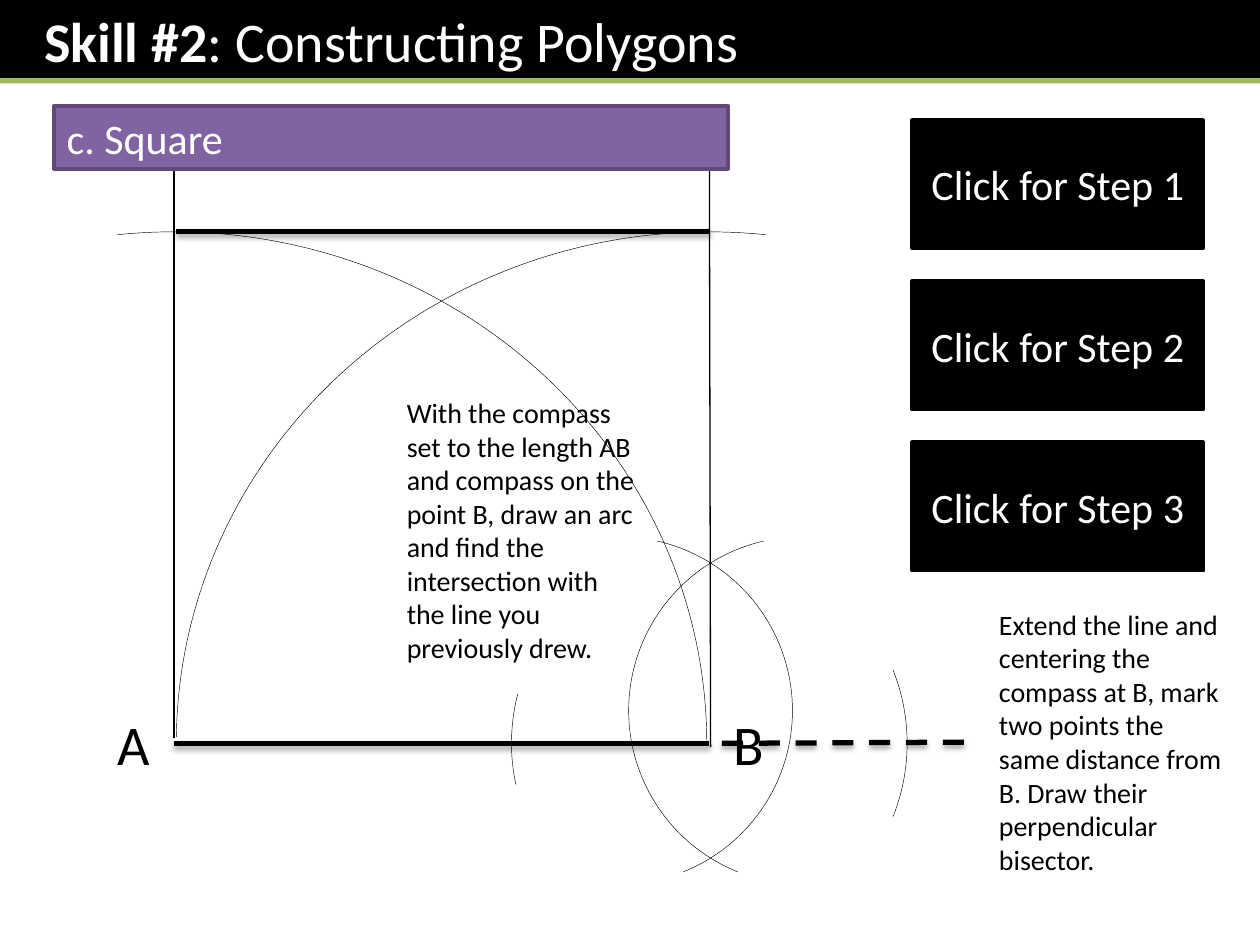
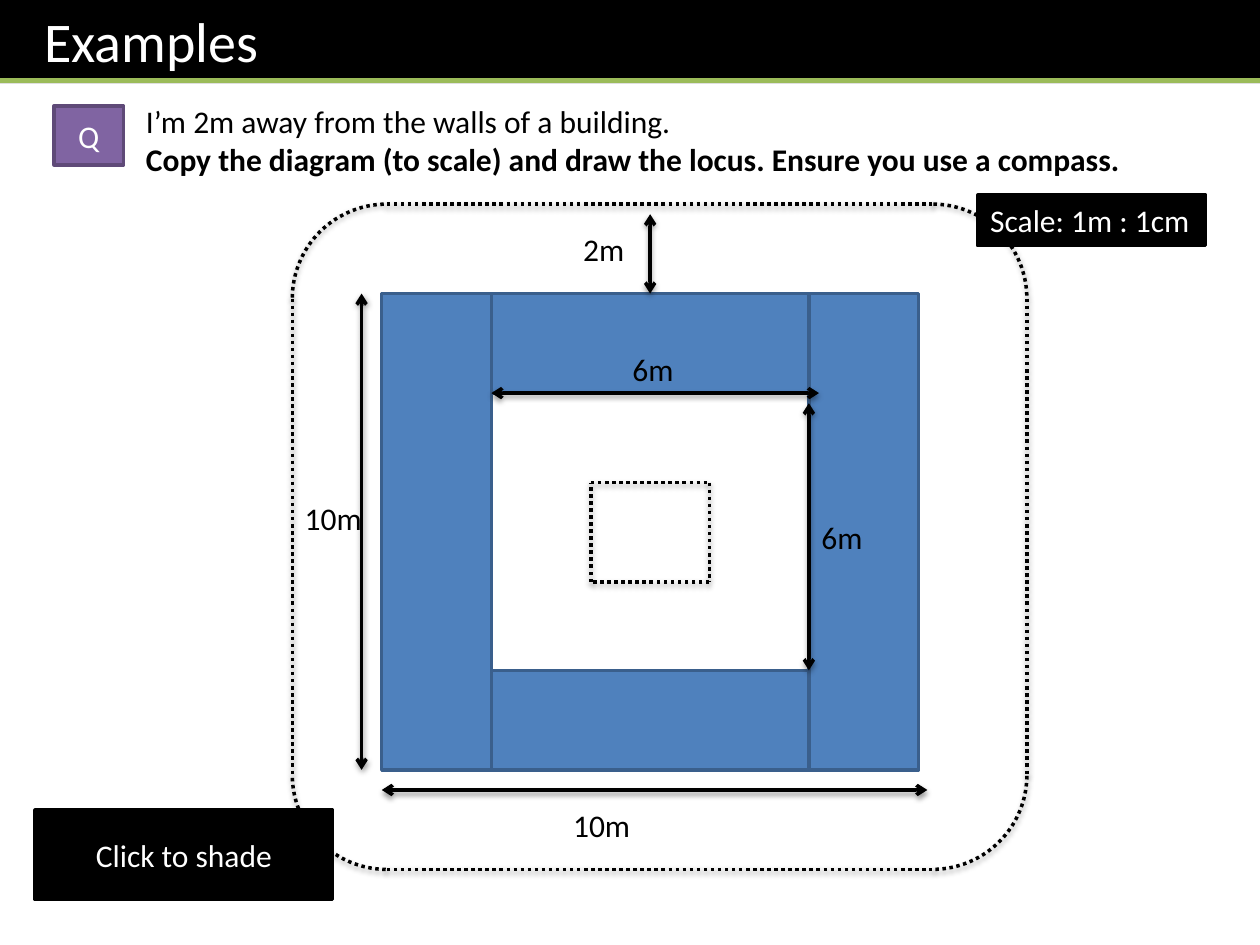
from lxml import etree
from pptx import Presentation
from pptx.dml.color import RGBColor
from pptx.enum.dml import MSO_LINE
from pptx.enum.shapes import MSO_CONNECTOR, MSO_SHAPE
from pptx.enum.text import MSO_ANCHOR, PP_ALIGN
from pptx.oxml.ns import qn
from pptx.util import Inches, Pt

RECT, ARC = MSO_SHAPE.RECTANGLE, MSO_SHAPE.ARC
STRAIGHT = MSO_CONNECTOR.STRAIGHT
DASH, DOTS = MSO_LINE.DASH, MSO_LINE.ROUND_DOT
LEFT, CENTER = PP_ALIGN.LEFT, PP_ALIGN.CENTER
TOP, MIDDLE = MSO_ANCHOR.TOP, MSO_ANCHOR.MIDDLE

COLORS = {
    "black": "000000",
    "white": "FFFFFF",
    "green": "9BBB59",
    "purple": "8064A2",
    "purple_edge": "5F4A78",
    "wall": "4F81BD",
    "wall_edge": "3A5F8C",
}
FONT = "Calibri"
# Shadow opacity in percent and distance in points
BOLD_SHADOW = (35, 1.8)
LOCUS_SHADOW = (38, 1.6)


def color(name):
    return RGBColor.from_string(COLORS[name])


def set_effects(shape, shadow=None):
    """Replace the theme shadow by the given one, or by none."""
    effects = etree.SubElement(shape._element.spPr, qn("a:effectLst"))
    if shadow:
        opacity, distance = shadow
        outer = etree.SubElement(effects, qn("a:outerShdw"), blurRad=str(Pt(3.1)),
                                 dist=str(Pt(distance)), dir="5400000", rotWithShape="0")
        black = etree.SubElement(outer, qn("a:srgbClr"), val=COLORS["black"])
        etree.SubElement(black, qn("a:alpha"), val=str(opacity * 1000))


def style_line(shape, width, ink="black", dash=None):
    shape.line.color.rgb = color(ink)
    shape.line.width = Pt(width)
    if dash:
        shape.line.dash_style = dash


def add_line(slide, start, end, width, ink="black", dash=None, shadow=None, arrows=False):
    line = slide.shapes.add_connector(STRAIGHT, *map(Inches, start + end))
    style_line(line, width, ink, dash)
    if arrows:
        for tip in ("a:headEnd", "a:tailEnd"):
            etree.SubElement(line.line._get_or_add_ln(), qn(tip), type="arrow")
    set_effects(line, shadow)


def add_arc(slide, center, radii, degrees, width=0.25, flip=False, rotation=0,
            dash=None, shadow=None):
    """Draw an arc clockwise between two angles, mirrored if flip is set."""
    (x, y), (rx, ry) = center, radii
    arc = slide.shapes.add_shape(ARC, *map(Inches, (x - rx, y - ry, 2 * rx, 2 * ry)))
    for i, angle in enumerate(degrees):
        arc.adjustments[i] = angle * 0.6
    arc.rotation = rotation
    if flip:
        arc._element.spPr.find(qn("a:xfrm")).set("flipH", "1")
    arc.fill.background()
    style_line(arc, width, dash=dash)
    set_effects(arc, shadow)


def write(shape, paragraphs, size, ink, align=LEFT, anchor=TOP):
    """Fill a shape with paragraphs, each a list of (text, bold) runs."""
    frame = shape.text_frame
    frame.word_wrap = True
    frame.vertical_anchor = anchor
    for i, runs in enumerate(paragraphs):
        paragraph = frame.add_paragraph() if i else frame.paragraphs[0]
        paragraph.alignment = align
        for text, bold in runs:
            run = paragraph.add_run()
            run.text = text
            run.font.name = FONT
            run.font.size = Pt(size)
            run.font.bold = bold
            run.font.color.rgb = color(ink)


def add_text(slide, box, paragraphs, size, align=LEFT):
    if isinstance(paragraphs, str):
        paragraphs = [[(paragraphs, False)]]
    text_box = slide.shapes.add_textbox(*map(Inches, box))
    write(text_box, paragraphs, size, "black", align)


def add_block(slide, box, fill, edge=None, text="", size=18, align=CENTER, anchor=MIDDLE):
    block = slide.shapes.add_shape(RECT, *map(Inches, box))
    block.fill.solid()
    block.fill.fore_color.rgb = color(fill)
    if edge:
        style_line(block, 2, edge)
    else:
        block.line.fill.background()
    set_effects(block)
    if text:
        write(block, [[(text, False)]], size, "white", align, anchor)
    return block


def add_title_band(slide, runs):
    band = add_block(slide, (0, 0, 10, 0.66), "black")
    band.text_frame.margin_left = Inches(0.35)
    write(band, [runs], 32, "white")
    add_line(slide, (0, 0.64), (10, 0.64), 3, "green")


def add_step_buttons(slide, left, top):
    for step in range(3):
        add_block(slide, (left, top + step * 1.28, 2.31, 1.02), "black", "black",
                  f"Click for Step {step + 1}", 24)


def add_square_construction(slide, left, top, width, height):
    """Draw the square on AB with its compass arcs and extended base."""
    right, base = left + width, top + height
    a, b = (left, base), (right, base)
    add_line(slide, a, b, 3, shadow=BOLD_SHADOW)
    add_line(slide, (right + 0.1, base), (right + 2.09, base - 0.01), 3,
             dash=DASH, shadow=BOLD_SHADOW)
    for name, x in (("A", left - 0.63), ("B", right)):
        add_text(slide, (x, base - 0.32, 0.63, 0.64), name, 32, CENTER)

    add_line(slide, (right + 0.01, base + 0.03), (right, top - 0.61), 0.75)
    add_line(slide, (left, base - 0.04), (left, top - 0.61), 0.75)
    add_line(slide, (right, top), (left + 0.02, top), 3, shadow=BOLD_SHADOW)

    side = (4.23, 4.06)
    add_arc(slide, b, side, (180.7, 276.31))
    add_arc(slide, a, side, (180.33, 276.31), flip=True)
    for span in ((158.26, 201.82), (345.44, 12.05)):
        add_arc(slide, b, (1.57, 1.57), span, flip=True)
    for offset, flip in ((-0.72, True), (0.74, False)):
        add_arc(slide, (right + offset, base - 0.26), (1.38, 1.38),
                (111.86, 257.13), flip=flip)


def add_building(slide, left, top, width, height):
    """Draw four walls round a courtyard."""
    side, band = 0.87, 0.79
    for y in (top, top + height - band):
        add_block(slide, (left + side, y, width - 2 * side, band), "wall", "wall_edge")
    for x in (left, left + width - side):
        add_block(slide, (x, top, side, height), "wall", "wall_edge")


def add_locus(slide, left, top, right, bottom):
    """Draw the dotted outline with rounded corners."""
    radius = 0.75
    dotted = {"width": 2, "dash": DOTS, "shadow": LOCUS_SHADOW}
    x1, x2 = left + radius, right - radius
    y1, y2 = top + radius, bottom - radius
    for turn, corner in enumerate(((x1, y1), (x2, y1), (x2, y2), (x1, y2))):
        add_arc(slide, corner, (radius, radius), (180.63, 268.73),
                rotation=90 * turn, **dotted)
    for x in (left, right):
        add_line(slide, (x, y1), (x, y2), **dotted)
    for y in (top, bottom):
        add_line(slide, (x1, y), (x2, y), **dotted)


def add_courtyard_locus(slide, left, top, right, bottom):
    corners = [(left, top), (right, top), (right, bottom), (left, bottom)]
    for start, end in zip(corners, corners[1:] + corners[:1]):
        add_line(slide, start, end, 2, dash=DOTS, shadow=LOCUS_SHADOW)


def add_dimension(slide, start, end, label, label_at):
    add_line(slide, start, end, 2, shadow=LOCUS_SHADOW, arrows=True)
    add_text(slide, (*label_at, 0.71, 0.4), label, 18)


def build_square_slide(slide):
    add_square_construction(slide, 1.38, 1.84, 4.25, 4.06)
    add_text(slide, (3.13, 3.09, 2.01, 2.26),
             "With the compass set to the length AB and compass on the point B, "
             "draw an arc and find the intersection with the line you previously drew.", 16)
    add_text(slide, (7.83, 4.77, 2.01, 2.26),
             "Extend the line and centering the compass at B, mark two points the "
             "same distance from B. Draw their perpendicular bisector.", 16)
    add_step_buttons(slide, 7.24, 0.95)
    add_block(slide, (0.43, 0.84, 5.35, 0.5), "purple", "purple_edge",
              "c. Square", 24, LEFT, TOP)
    add_title_band(slide, [("Skill #2", True), (": Constructing Polygons", False)])


def build_locus_slide(slide):
    add_building(slide, 3.03, 2.33, 4.26, 3.78)
    add_locus(slide, 2.32, 1.62, 8.15, 6.9)
    add_courtyard_locus(slide, 4.69, 3.83, 5.63, 4.62)
    for dimension in (
        ((5.16, 2.33), (5.16, 1.7), "2m", (4.53, 1.78)),
        ((2.87, 2.33), (2.87, 6.11), "10m", (2.32, 3.91)),
        ((3.03, 6.27), (7.36, 6.27), "10m", (4.45, 6.35)),
        ((6.5, 3.12), (3.9, 3.12), "6m", (4.92, 2.73)),
        ((6.42, 5.32), (6.42, 3.2), "6m", (6.42, 4.06)),
    ):
        add_dimension(slide, *dimension)
    add_block(slide, (7.76, 1.55, 1.81, 0.4), "black", "black",
              "Scale: 1m : 1cm", 18, LEFT, TOP)
    add_title_band(slide, [("Examples", False)])
    add_block(slide, (0.43, 0.84, 0.55, 0.47), "purple", "purple_edge", "Q")
    add_text(slide, (1.06, 0.76, 7.95, 0.71), [
        [("I’m 2m away from the walls of a building.", False)],
        [("Copy the diagram (to scale) and draw the locus. Ensure you use a compass.", True)],
    ], 18)
    add_block(slide, (0.28, 6.43, 2.36, 0.71), "black", "black", "Click to shade")


def main():
    deck = Presentation()
    deck.slide_width, deck.slide_height = Inches(10), Inches(7.5)
    blank = deck.slide_layouts[6]
    for build in (build_square_slide, build_locus_slide):
        build(deck.slides.add_slide(blank))
    deck.save("out.pptx")


if __name__ == "__main__":
    main()
